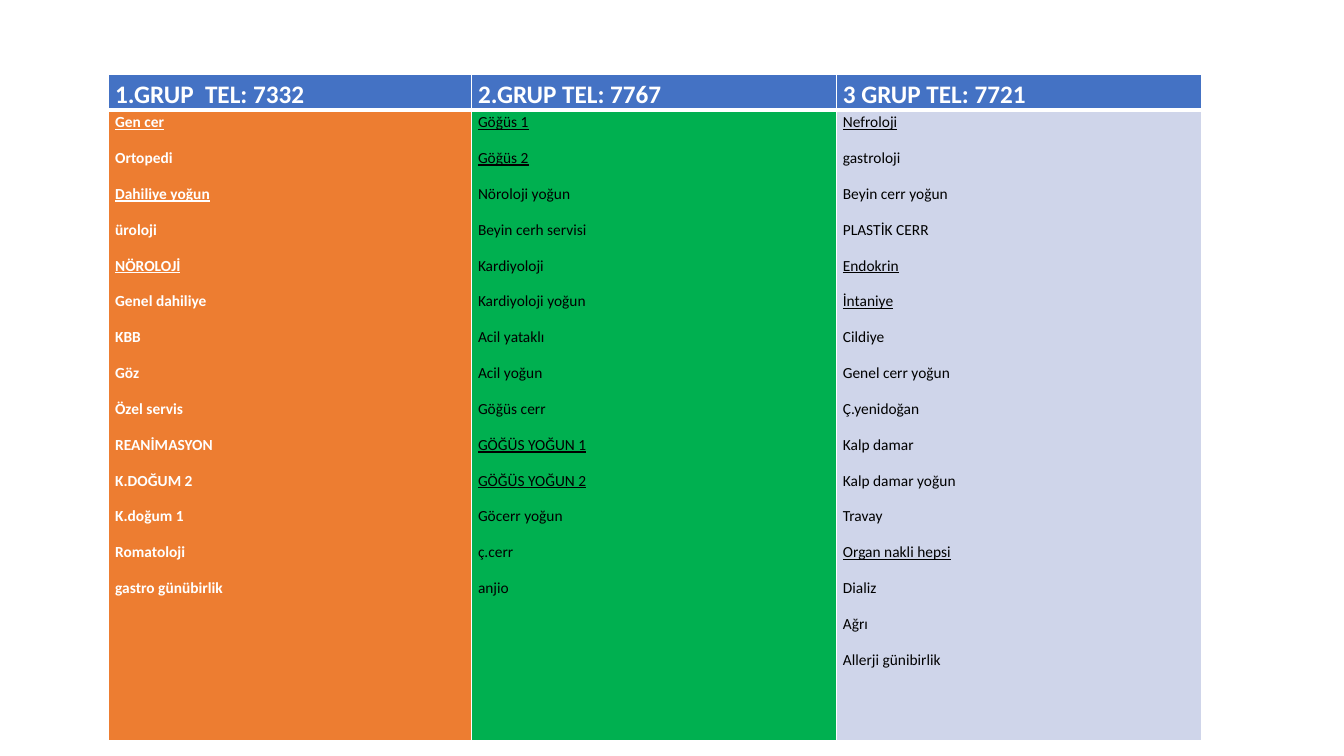
from lxml import etree
from pptx import Presentation
from pptx.dml.color import RGBColor
from pptx.oxml import ns
from pptx.util import Pt

WHITE = RGBColor(0xFF, 0xFF, 0xFF)
BLACK = RGBColor(0, 0, 0)
BLUE = RGBColor(0x44, 0x72, 0xC4)
ORANGE = RGBColor(0xED, 0x7D, 0x31)
GREEN = RGBColor(0x00, 0xB0, 0x50)
PALE = RGBColor(0xCF, 0xD5, 0xEA)

# Content: title, column width, fill, text colour, bold, wards, underlined wards
GROUPS = [
    ("1.GRUP  TEL: 7332", 259.2, ORANGE, WHITE, True,
     ["Gen cer", "Ortopedi", "Dahiliye yoğun", "üroloji", "NÖROLOJİ",
      "Genel dahiliye", "KBB", "Göz", "Özel servis", "REANİMASYON",
      "K.DOĞUM 2", "K.doğum 1", "Romatoloji", "gastro günübirlik"],
     {"Gen cer", "Dahiliye yoğun", "NÖROLOJİ"}),
    ("2.GRUP TEL: 7767", 260.64, GREEN, BLACK, False,
     ["Göğüs 1", "Göğüs 2", "Nöroloji yoğun", "Beyin cerh servisi",
      "Kardiyoloji", "Kardiyoloji yoğun", "Acil yataklı", "Acil yoğun",
      "Göğüs cerr", "GÖĞÜS YOĞUN 1", "GÖĞÜS YOĞUN 2", "Göcerr yoğun",
      "ç.cerr", "anjio"],
     {"Göğüs 1", "Göğüs 2", "GÖĞÜS YOĞUN 1", "GÖĞÜS YOĞUN 2"}),
    ("3 GRUP TEL: 7721", 260.64, PALE, BLACK, False,
     ["Nefroloji", "gastroloji", "Beyin cerr yoğun", "PLASTİK CERR",
      "Endokrin", "İntaniye", "Cildiye", "Genel cerr yoğun", "Ç.yenidoğan",
      "Kalp damar", "Kalp damar yoğun", "Travay", "Organ nakli hepsi",
      "Dializ", "Ağrı", "Allerji günibirlik"],
     {"Nefroloji", "Endokrin", "İntaniye", "Organ nakli hepsi"}),
]
LEFT, TOP = 77.76, 53.4
ROWS = [25.2, 450]


def border(cell, side, width):
    props = cell._tc.get_or_add_tcPr()
    line = etree.SubElement(props, ns.qn("a:ln" + side), w=str(Pt(width)))
    fill = etree.SubElement(line, ns.qn("a:solidFill"))
    etree.SubElement(fill, ns.qn("a:srgbClr"), val=str(WHITE))


def write(cell, lines, size, color, bold, marked=()):
    frame = cell.text_frame
    for i, line in enumerate(lines):
        para = frame.add_paragraph() if i else frame.paragraphs[0]
        para.line_spacing = 1.15
        para.space_after = Pt(10)
        run = para.add_run()
        run.text = line
        font = run.font
        font.name, font.size, font.bold = "Calibri", Pt(size), bold
        font.underline = line in marked
        font.color.rgb = color


def style(cell, fill, top, bottom):
    cell.margin_left = cell.margin_right = Pt(4.5)
    cell.margin_top = cell.margin_bottom = Pt(0)
    for side, width in zip("LRTB", (1, 1, top, bottom)):
        border(cell, side, width)
    cell.fill.solid()
    cell.fill.fore_color.rgb = fill


# Slide
deck = Presentation()
deck.slide_width, deck.slide_height = Pt(960), Pt(540)
slide = deck.slides.add_slide(deck.slide_layouts[6])

# Table frame
width = sum(group[1] for group in GROUPS)
table = slide.shapes.add_table(len(ROWS), len(GROUPS), Pt(LEFT), Pt(TOP),
                               Pt(width), Pt(sum(ROWS))).table
table.horz_banding = False
for row, height in zip(table.rows, ROWS):
    row.height = Pt(height)

# Group columns
for col, (title, wide, fill, ink, bold, wards, marked) in enumerate(GROUPS):
    table.columns[col].width = Pt(wide)
    head, body = table.cell(0, col), table.cell(1, col)
    style(head, BLUE, 1, 3)
    write(head, [title], 18, WHITE, True)
    style(body, fill, 3, 1)
    write(body, wards, 11, ink, bold, marked)

deck.save("out.pptx")
